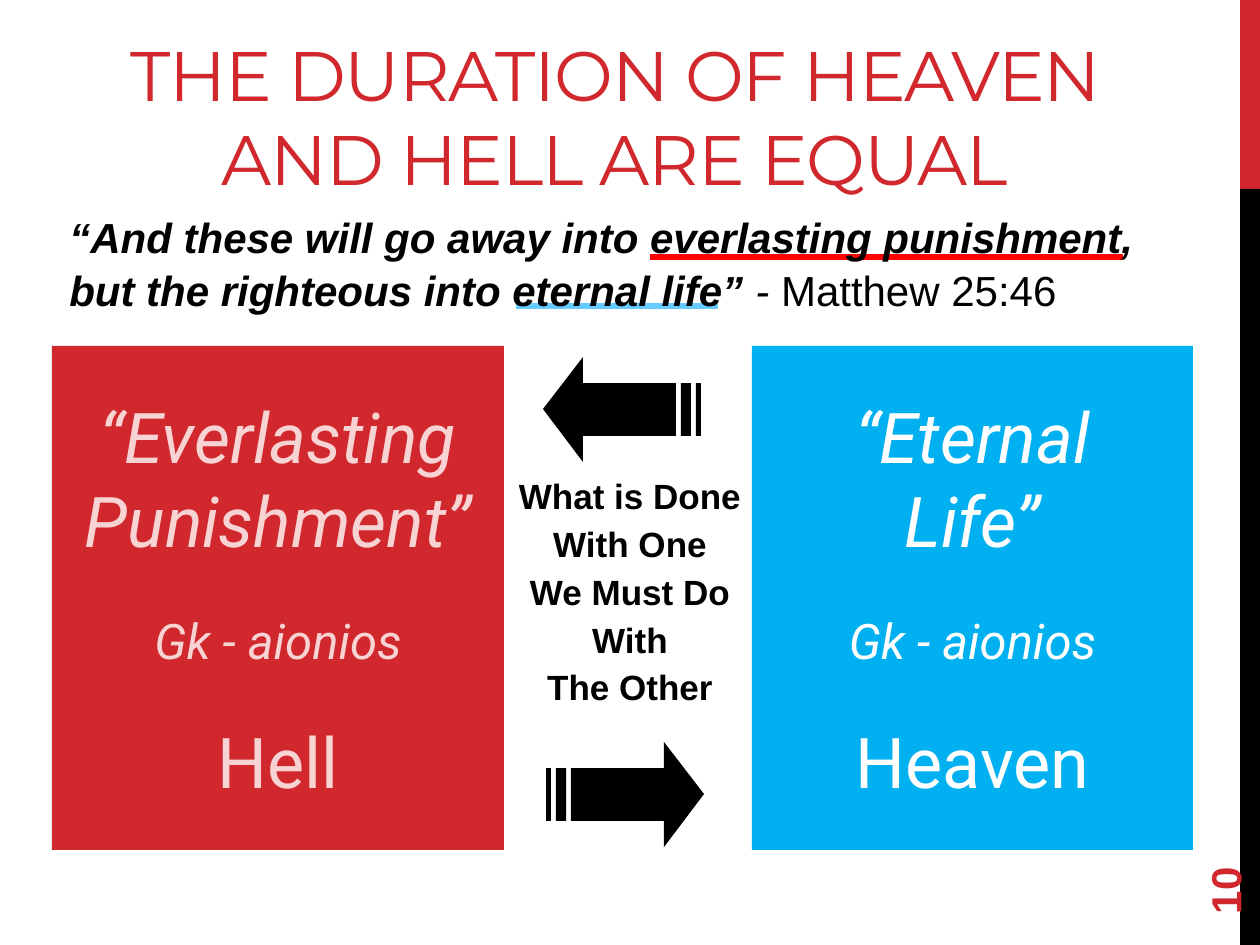
from lxml.etree import SubElement
from pptx import Presentation
from pptx.dml.color import RGBColor
from pptx.enum.shapes import MSO_CONNECTOR as CONNECTOR, MSO_SHAPE as SHAPE
from pptx.enum.text import MSO_ANCHOR as ANCHOR, PP_ALIGN as ALIGN
from pptx.oxml.ns import qn
from pptx.util import Pt

PX = 914400 / 126
COLORS = dict(red="D1282E", pink="F7D3D4", blue="00B0F0", white="FFFFFF",
              black="000000", underline_red="FF0000", underline_blue="66CCFF")

# Content: a paragraph is (runs, paragraph format), a run is (text, font format)
TITLE_FONT = dict(name="Montserrat", size=Pt(40), color="red")
VERSE_FONT = dict(name="Arial", size=Pt(24), color="black")
MOTTO_FONT = dict(name="Arial", size=Pt(20), color="black", bold=True)
NUMBER_FONT = dict(name="Arial", size=Pt(24), color="red", bold=True)
CENTER = dict(alignment=ALIGN.CENTER)

TITLE = "THE DURATION OF HEAVEN AND HELL ARE EQUAL"
VERSE = [
    ("“And these will go away into everlasting punishment, "
     "but the righteous into eternal life” ", dict(bold=True, italic=True)),
    ("- ", dict(italic=True)),
    ("Matthew 25:46", {}),
]
MOTTO = ["What is Done", "With One", "We Must Do", "With", "The Other"]
PAGE = "10"
PANELS = [  # box, fill, text colour, quoted lines, place
    ((52, 346, 452, 504), "red", "pink", ["“Everlasting", "Punishment”"], "Hell"),
    ((752, 346, 441, 504), "blue", "white", ["“Eternal", "Life”"], "Heaven"),
]
GREEK = "Gk - aionios"
SIDE_BARS = [((1240, 0, 20, 189), "red"), ((1240, 189, 20, 756), "black")]
UNDERLINES = [(650, 1123, 257, "underline_red"), (516, 718, 306, "underline_blue")]

# Striped arrow pointing right, in px from its own corner
ARROW_WIDTH = 158
ARROW_PARTS = [
    [(118, 0), (118, 26), (25, 26), (25, 79), (118, 79), (118, 105), (158, 52)],
    [(10, 26), (10, 79), (20, 79), (20, 26)],
    [(0, 26), (0, 79), (5, 79), (5, 26)],
]
ARROWS = [(546, 742, False), (543, 357, True)]  # left, top, points left


def px(*lengths):
    return [round(length * PX) for length in lengths]


def rgb(name):
    return RGBColor.from_string(COLORS[name])


def paint(shape, color):
    shape.shadow.inherit = False
    shape.fill.solid()
    shape.fill.fore_color.rgb = rgb(color)
    shape.line.fill.background()


def write(frame, paragraphs, base_font):
    for i, (runs, layout) in enumerate(paragraphs):
        paragraph = frame.add_paragraph() if i else frame.paragraphs[0]
        for key, value in layout.items():
            setattr(paragraph, key, value)
        for text, extra in runs:
            run = paragraph.add_run()
            run.text = text
            for key, value in {**base_font, **extra}.items():
                if key == "color":
                    run.font.color.rgb = rgb(value)
                else:
                    setattr(run.font, key, value)


def add_text(box, paragraphs, font):
    text_box = slide.shapes.add_textbox(*px(*box))
    text_box.text_frame.word_wrap = True
    write(text_box.text_frame, paragraphs, font)
    return text_box


def add_block(box, color):
    block = slide.shapes.add_shape(SHAPE.RECTANGLE, *px(*box))
    paint(block, color)
    return block


prs = Presentation()
prs.slide_width, prs.slide_height = px(1260, 945)
slide = prs.slides.add_slide(prs.slide_layouts[6])

# Side bars and page number
for box, color in SIDE_BARS:
    add_block(box, color)
number = add_text((1134, 811, 181, 50), [([(PAGE, {})], {})], NUMBER_FONT)
number.rotation = 270
number.text_frame.vertical_anchor = ANCHOR.MIDDLE

# Hell and Heaven panels
for box, fill, color, quote, place in PANELS:
    frame = add_block(box, fill).text_frame
    frame.word_wrap = False
    frame.vertical_anchor = ANCHOR.MIDDLE
    gap = dict(CENTER, space_before=Pt(28))
    lines = [([(line, dict(italic=True))], CENTER) for line in quote]
    lines += [([(GREEK, dict(italic=True, size=Pt(28)))], gap), ([(place, {})], gap)]
    write(frame, lines, dict(name="Roboto", size=Pt(40), color=color))

# Striped arrows
for left, top, mirrored in ARROWS:
    outline = None
    for part in ARROW_PARTS:
        points = [(ARROW_WIDTH - x if mirrored else x, y) for x, y in part]
        if outline is None:
            outline = slide.shapes.build_freeform(*points[0], scale=PX)
        else:
            outline.move_to(*points[0])
        outline.add_line_segments(points[1:], close=True)
    paint(outline.convert_to_shape(*px(left, top)), "black")

# Motto between the panels
motto = [([(line, {})], dict(CENTER, line_spacing=0.7, space_before=Pt(10.5 if i else 0)))
         for i, line in enumerate(MOTTO)]
add_text((499, 480, 262, 247), motto, MOTTO_FONT)

# Underlines of the verse
for start, end, y, color in UNDERLINES:
    underline = slide.shapes.add_connector(CONNECTOR.STRAIGHT, *px(start, y, end, y))
    underline.line.color.rgb = rgb(color)
    underline.line.width = Pt(3)
    SubElement(underline._element.spPr, qn("a:effectLst"))

# Title and verse
title = add_text((32, 25, 1166, 156), [([(TITLE, {})], CENTER)], TITLE_FONT)
title.text_frame.paragraphs[0].runs[0].font._element.set("spc", "-60")
add_text((57, 202, 1124, 115), [(VERSE, dict(line_spacing=1.06))], VERSE_FONT)

prs.save("out.pptx")
